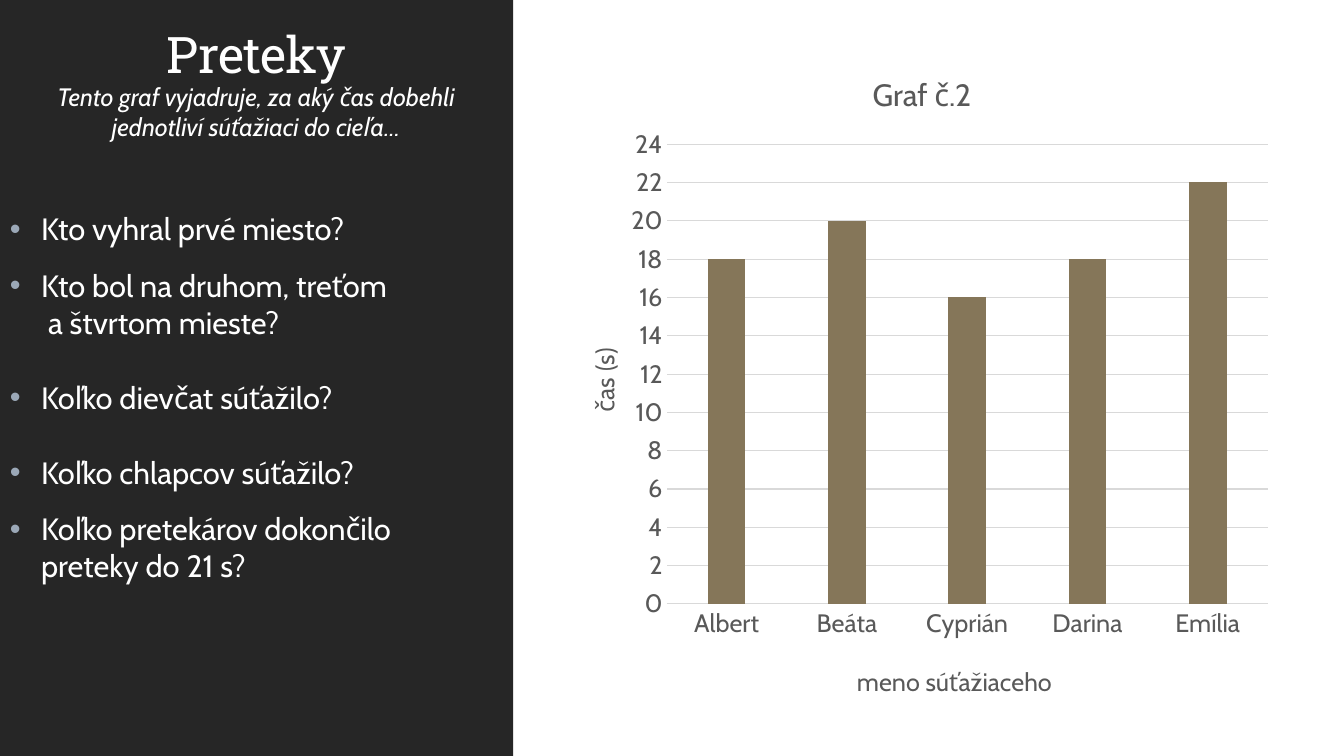
from lxml import etree
from pptx import Presentation
from pptx.chart.data import CategoryChartData
from pptx.dml.color import RGBColor
from pptx.enum.chart import XL_CHART_TYPE, XL_TICK_MARK
from pptx.enum.shapes import MSO_SHAPE
from pptx.enum.text import MSO_ANCHOR, PP_ALIGN
from pptx.oxml.ns import qn
from pptx.util import Inches, Pt

COLUMN = XL_CHART_TYPE.COLUMN_CLUSTERED
NO_TICK = XL_TICK_MARK.NONE
RECTANGLE = MSO_SHAPE.RECTANGLE
TOP, BOTTOM = MSO_ANCHOR.TOP, MSO_ANCHOR.BOTTOM
LEFT, CENTER = PP_ALIGN.LEFT, PP_ALIGN.CENTER

WHITE = RGBColor(0xFF, 0xFF, 0xFF)
DARK = RGBColor(0x26, 0x26, 0x26)
BULLET = RGBColor(0x9B, 0xA8, 0xB7)
GRAY = RGBColor(0x59, 0x59, 0x59)
GRID = RGBColor(0xD9, 0xD9, 0xD9)
BROWN = RGBColor(0x85, 0x76, 0x59)

# Question and line spacing
QUESTIONS = [
    ("Kto vyhral prvé miesto?", 1.5),
    ("Kto bol na druhom, treťom\v a štvrtom mieste?", 1.0),
    ("Koľko dievčat súťažilo?", 1.5),
    ("Koľko chlapcov súťažilo?", 1.5),
    ("Koľko pretekárov dokončilo preteky do 21 s?", 1.0),
]
TIMES = {"Albert": 18, "Beáta": 20, "Cyprián": 16, "Darina": 18, "Emília": 22}


def make_layout(**values):
    """Return a manual chart layout, in fractions of the chart area."""
    layout = etree.Element(qn("c:layout"))
    manual = etree.SubElement(layout, qn("c:manualLayout"))
    if "w" in values:
        etree.SubElement(manual, qn("c:layoutTarget")).set("val", "inner")
    for axis in "xy":
        etree.SubElement(manual, qn(f"c:{axis}Mode")).set("val", "edge")
    for name, value in values.items():
        etree.SubElement(manual, qn(f"c:{name}")).set("val", str(value))
    return layout


class SlideBuilder:
    heading_font = "Roboto Slab"
    body_font = "Cabin"

    def __init__(self, slide):
        self.slide = slide

    def style(self, font, size, color, name=None):
        font.name = name or self.body_font
        font.size = Pt(size)
        font.color.rgb = color
        font.bold = False

    def panel(self, left, top, width, height, color):
        shape = self.slide.shapes.add_shape(
            RECTANGLE, Inches(left), Inches(top), Inches(width), Inches(height))
        shape.shadow.inherit = False
        shape.fill.solid()
        shape.fill.fore_color.rgb = color
        shape.line.fill.background()

    def text(self, left, top, width, height, text, size,
             name=None, align=CENTER, anchor=TOP):
        """Add a text box and return its paragraphs."""
        box = self.slide.shapes.add_textbox(
            Inches(left), Inches(top), Inches(width), Inches(height))
        frame = box.text_frame
        frame.word_wrap = True
        frame.vertical_anchor = anchor
        frame.text = text
        for paragraph in frame.paragraphs:
            paragraph.alignment = align
            for run in paragraph.runs:
                self.style(run.font, size, WHITE, name)
        return frame.paragraphs

    def bullet(self, paragraph, line_spacing):
        paragraph.line_spacing = line_spacing
        paragraph.space_before = Pt(12)
        paragraph.space_after = Pt(2)
        properties = paragraph._p.get_or_add_pPr()
        properties.set("marL", str(Inches(0.31)))
        properties.set("indent", str(-Inches(0.31)))
        color = etree.SubElement(properties, qn("a:buClr"))
        etree.SubElement(color, qn("a:srgbClr")).set("val", str(BULLET))
        etree.SubElement(properties, qn("a:buFont")).set("typeface", "Arial")
        etree.SubElement(properties, qn("a:buChar")).set("char", "•")

    def chart_title(self, title, text, size, x, y):
        title.text_frame.text = text
        self.style(title.text_frame.paragraphs[0].runs[0].font, size, GRAY)
        element = title.element
        for old in element.findall(qn("c:layout")):
            element.remove(old)
        element.find(qn("c:tx")).addnext(make_layout(x=x, y=y))

    def column_chart(self, left, top, width, height, values):
        data = CategoryChartData()
        data.categories = list(values)
        data.add_series("Series 1", list(values.values()))
        chart = self.slide.shapes.add_chart(
            COLUMN, Inches(left), Inches(top), Inches(width), Inches(height), data).chart
        self.style(chart.font, 18, GRAY)
        chart.has_legend = False
        chart.has_title = True
        self.chart_title(chart.chart_title, "Graf č.2", 22, 0.43, 0.04)

        plot = chart.plots[0]
        plot.gap_width = 219
        plot.overlap = -27
        plot.vary_by_categories = False
        fill = plot.series[0].format.fill
        fill.solid()
        fill.fore_color.rgb = BROWN

        names, times = chart.category_axis, chart.value_axis
        for axis in (names, times):
            axis.major_tick_mark = axis.minor_tick_mark = NO_TICK
            self.style(axis.tick_labels.font, 18, GRAY)
        self.chart_title(names.axis_title, "meno súťažiaceho", 18, 0.41, 0.92)
        self.chart_title(times.axis_title, "čas (s)", 18, 0.04, 0.45)
        times.minimum_scale, times.maximum_scale, times.major_unit = 0, 24, 2
        times.has_major_gridlines = True
        times.format.line.fill.background()
        for line in (names.format.line, times.major_gridlines.format.line):
            line.color.rgb = GRID
            line.width = Pt(0.75)

        plot_area = chart.element.find(f".//{qn('c:plotArea')}")
        for old in plot_area.findall(qn("c:layout")):
            plot_area.remove(old)
        plot_area.insert(0, make_layout(x=0.155, y=0.153, w=0.825, h=0.684))


def main():
    presentation = Presentation()
    presentation.slide_width = Inches(13.33)
    presentation.slide_height = Inches(7.5)
    builder = SlideBuilder(presentation.slides.add_slide(presentation.slide_layouts[6]))

    builder.panel(0, 0, 5.09, 7.5, DARK)
    questions = builder.text(0, 1.85, 4.83, 5.41,
                             "\n".join(question for question, _ in QUESTIONS), 22, align=LEFT)
    for paragraph, (_, line_spacing) in zip(questions, QUESTIONS):
        builder.bullet(paragraph, line_spacing)
    builder.column_chart(5.49, 0.41, 7.23, 6.67, TIMES)

    heading = builder.text(0.62, 0.24, 3.85, 0.65, "Preteky", 36,
                           builder.heading_font, anchor=BOTTOM)[0]
    heading.line_spacing = 0.9
    heading.runs[0].font._element.set("spc", "-50")
    subtitle = builder.text(
        0.45, 0.76, 4.18, 0.71,
        "Tento graf vyjadruje, za aký čas dobehli jednotliví súťažiaci do cieľa...", 18)[0]
    subtitle.runs[0].font.italic = True

    presentation.save("out.pptx")


if __name__ == "__main__":
    main()
